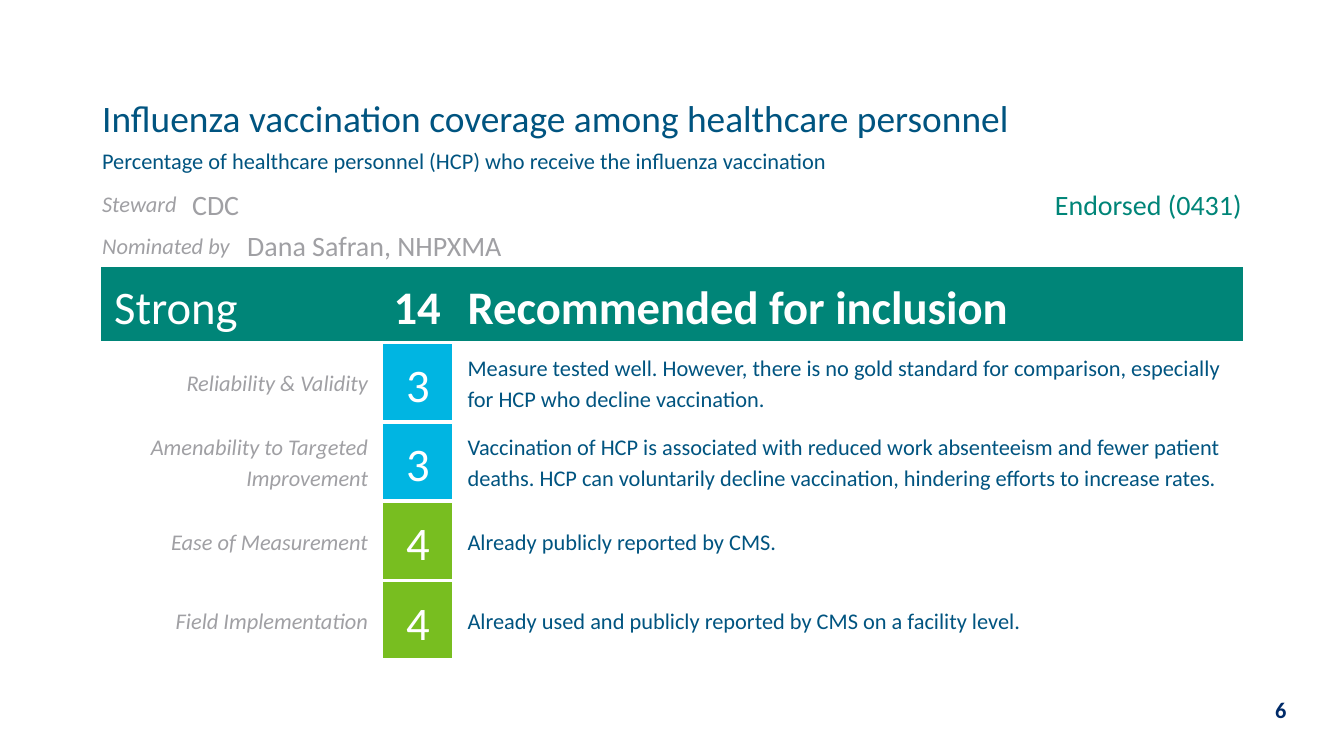
import dataclasses

import pptx
import pptx.dml.color
import pptx.enum.text
import pptx.oxml.ns
import pptx.table
import pptx.util
from lxml import etree

Align = pptx.enum.text.PP_ALIGN
Anchor = pptx.enum.text.MSO_ANCHOR
Inches = pptx.util.Inches


@dataclasses.dataclass(frozen=True)
class Theme:
    font: str = "Calibri"
    navy: str = "002B69"
    blue: str = "005480"
    gray: str = "A0A0A4"
    teal: str = "008578"
    cyan: str = "00B5E2"
    green: str = "78BE20"
    white: str = "FFFFFF"
    title: float = 20
    score: float = 25
    detail: float = 15
    small: float = 12
    border: float = 2.25
    leading: float = 1.15
    plain_style: str = "{2D5ABB26-0587-4C30-8999-92F81FD0307C}"


THEME = Theme()
PADDED = (0.1, 0.05, 0.1, 0.05)
TIGHT = (0.01, 0.01, 0.1, 0)
SUBTITLE = (0.01, 0.01, 0.1, 0.05)
TIGHT_RIGHT = (0.1, 0.01, 0.01, 0)

# Table grid in inches
COLUMNS = (0.67, 0.41, 0.7, 0.31, 0.54, 3.29, 2.58)
ROWS = (0.4, 0.29, 0.31, 0.31, 0.58) + (0.59,) * 4


@dataclasses.dataclass(frozen=True)
class Entry:
    """Text in a table cell, placed by row, column and column span."""
    row: int
    column: int
    span: int
    text: str
    size: float = THEME.small
    color: str = THEME.blue
    bold: bool = False
    italic: bool = False
    align: Align = Align.LEFT
    anchor: Anchor = Anchor.MIDDLE
    insets: tuple[float, ...] = PADDED
    fill: str | None = None
    borders: str = ""


@dataclasses.dataclass(frozen=True)
class Criterion:
    name: str
    score: int
    color: str
    comment: str


# Measure description, rating band and criteria
HEADER = (
    Entry(0, 0, 7, "Influenza vaccination coverage among healthcare personnel",
          THEME.title, insets=TIGHT),
    Entry(1, 0, 7, "Percentage of healthcare personnel (HCP) who receive the influenza vaccination",
          anchor=Anchor.TOP, insets=SUBTITLE),
    Entry(2, 0, 1, "Steward", color=THEME.gray, italic=True, insets=TIGHT),
    Entry(2, 1, 5, "CDC", THEME.detail, THEME.gray, insets=TIGHT),
    Entry(2, 6, 1, "Endorsed (0431)", THEME.detail, THEME.teal,
          align=Align.RIGHT, insets=TIGHT_RIGHT),
    Entry(3, 0, 2, "Nominated by", color=THEME.gray, italic=True, insets=TIGHT),
    Entry(3, 2, 5, "Dana Safran, NHPXMA", THEME.detail, THEME.gray, insets=TIGHT),
)
RATING = (
    Entry(4, 0, 3, "Strong", THEME.score, THEME.white, fill=THEME.teal, borders="TB"),
    Entry(4, 3, 2, "14", THEME.score, THEME.white, bold=True, align=Align.RIGHT,
          fill=THEME.teal, borders="TB"),
    Entry(4, 5, 2, "Recommended for inclusion", THEME.score, THEME.white, bold=True,
          fill=THEME.teal, borders="TB"),
)
CRITERIA = (
    Criterion("Reliability & Validity", 3, THEME.cyan,
              "Measure tested well. However, there is no gold standard for comparison, "
              "especially for HCP who decline vaccination."),
    Criterion("Amenability to Targeted Improvement", 3, THEME.cyan,
              "Vaccination of HCP is associated with reduced work absenteeism and fewer "
              "patient deaths. HCP can voluntarily decline vaccination, hindering efforts "
              "to increase rates."),
    Criterion("Ease of Measurement", 4, THEME.green, "Already publicly reported by CMS."),
    Criterion("Field Implementation", 4, THEME.green,
              "Already used and publicly reported by CMS on a facility level."),
)


def criterion_entries(row: int, item: Criterion) -> tuple[Entry, ...]:
    return (
        Entry(row, 0, 4, item.name, color=THEME.gray, italic=True,
              align=Align.RIGHT, borders="RTB"),
        Entry(row, 4, 1, str(item.score), THEME.score, THEME.white,
              align=Align.CENTER, fill=item.color, borders="LRTB"),
        Entry(row, 5, 2, item.comment, borders="LRTB"),
    )


def rgb(color: str) -> pptx.dml.color.RGBColor:
    return pptx.dml.color.RGBColor.from_string(color)


def style_font(font, size: float, color: str, bold: bool, italic: bool = False) -> None:
    font.name, font.size = THEME.font, pptx.util.Pt(size)
    font.bold, font.italic = bold, italic
    font.color.rgb = rgb(color)


def draw_borders(cell: pptx.table._Cell, sides: str) -> None:
    qn = pptx.oxml.ns.qn
    properties = cell._tc.get_or_add_tcPr()
    for side in sides:
        line = etree.SubElement(properties, qn(f"a:ln{side}"),
                                w=str(pptx.util.Pt(THEME.border)))
        fill = etree.SubElement(line, qn("a:solidFill"))
        etree.SubElement(fill, qn("a:srgbClr"), val=THEME.white)


def draw_entry(table: pptx.table.Table, entry: Entry) -> None:
    cell = table.cell(entry.row, entry.column)
    if entry.span > 1:
        cell.merge(table.cell(entry.row, entry.column + entry.span - 1))
    draw_borders(cell, entry.borders)
    if entry.fill:
        cell.fill.solid()
        cell.fill.fore_color.rgb = rgb(entry.fill)
    else:
        cell.fill.background()
    (cell.margin_left, cell.margin_top,
     cell.margin_right, cell.margin_bottom) = map(Inches, entry.insets)
    cell.vertical_anchor = entry.anchor
    para = cell.text_frame.paragraphs[0]
    para.text, para.alignment = entry.text, entry.align
    para.line_spacing = THEME.leading
    style_font(para.font, entry.size, entry.color, entry.bold, entry.italic)


def draw_scorecard(page) -> None:
    frame = page.shapes.add_table(len(ROWS), len(COLUMNS), Inches(0.75), Inches(0.66),
                                  Inches(sum(COLUMNS)), Inches(sum(ROWS)))
    table = frame.table
    table.first_row = table.horz_banding = False
    table._tbl.tblPr.find(pptx.oxml.ns.qn("a:tableStyleId")).text = THEME.plain_style
    for column, width in zip(table.columns, COLUMNS):
        column.width = Inches(width)
    for row, height in zip(table.rows, ROWS):
        row.height = Inches(height)
    for entry in HEADER + RATING:
        draw_entry(table, entry)
    for row, item in enumerate(CRITERIA, start=5):
        for entry in criterion_entries(row, item):
            draw_entry(table, entry)


def draw_page_number(page, number: int) -> None:
    box = page.shapes.add_textbox(Inches(7.59), Inches(5.18), Inches(2.08), Inches(0.2))
    box.text_frame.word_wrap = True
    box.text_frame.vertical_anchor = Anchor.MIDDLE
    para = box.text_frame.paragraphs[0]
    para.text, para.alignment = str(number), Align.RIGHT
    style_font(para.font, THEME.small, THEME.navy, bold=True)


def main() -> None:
    deck = pptx.Presentation()
    # Widescreen page, 16:9
    deck.slide_width = Inches(10)
    deck.slide_height = deck.slide_width * 9 // 16
    page = deck.slides.add_slide(deck.slide_layouts[6])
    draw_page_number(page, 6)
    draw_scorecard(page)
    deck.save("out.pptx")


if __name__ == "__main__":
    main()
